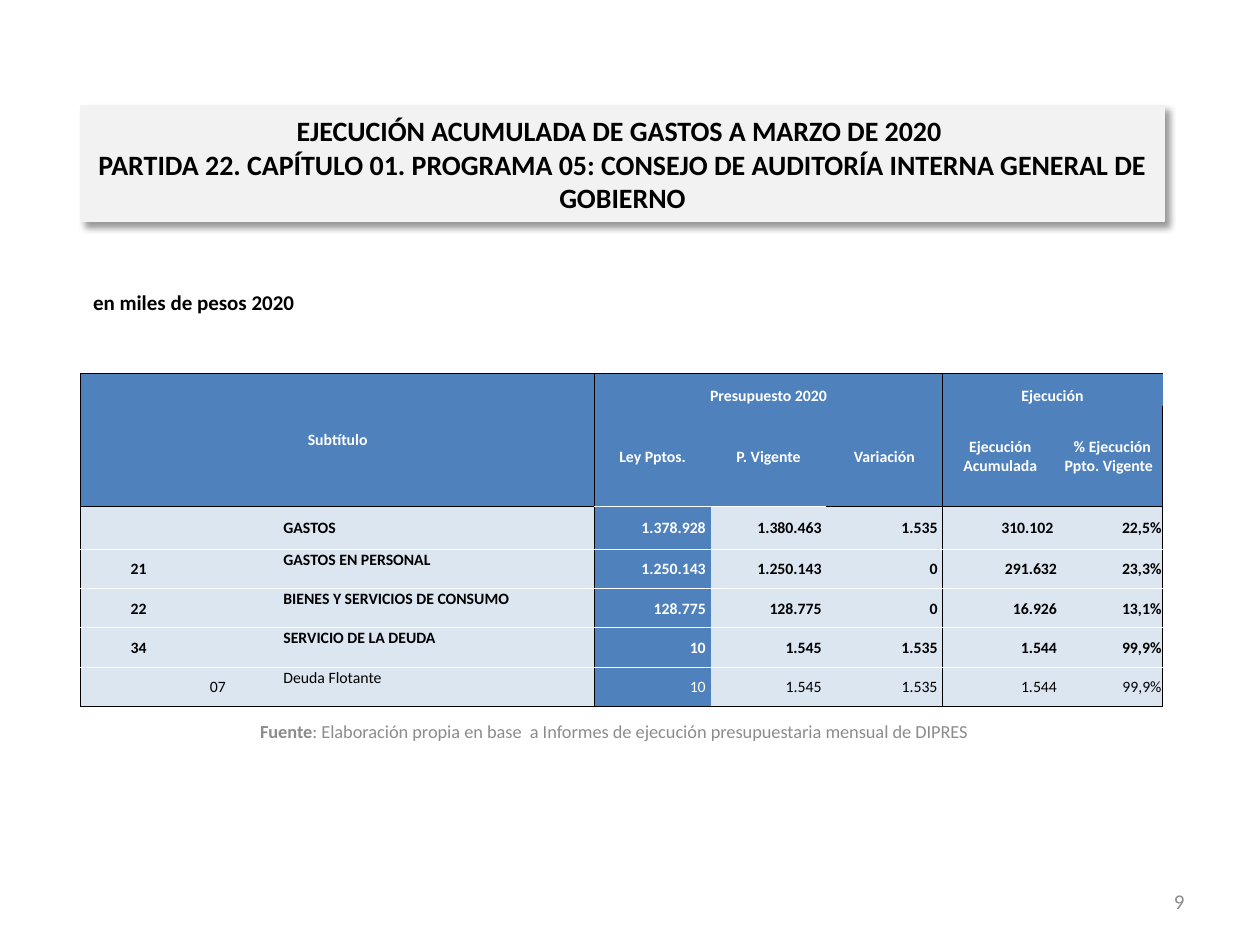
from dataclasses import dataclass
from typing import Optional

from lxml import etree
from pptx import Presentation
from pptx.dml.color import RGBColor
from pptx.enum.text import MSO_ANCHOR, MSO_AUTO_SIZE, PP_ALIGN
from pptx.oxml import parse_xml
from pptx.oxml.ns import nsdecls, qn
from pptx.util import Inches, Pt

LEFT, CENTER, RIGHT = PP_ALIGN.LEFT, PP_ALIGN.CENTER, PP_ALIGN.RIGHT
TOP, MIDDLE, BOTTOM = MSO_ANCHOR.TOP, MSO_ANCHOR.MIDDLE, MSO_ANCHOR.BOTTOM
NO_AUTOFIT = MSO_AUTO_SIZE.NONE

FONT = "Calibri"
COLORS = {"black": "000000", "white": "FFFFFF", "gray": "8C8C8C",
          "panel": "F2F2F2", "blue": "4F81BD", "pale": "DCE6F1"}
SLIDE_WIDTH, SLIDE_HEIGHT = Inches(10), Inches(7.5)
PLAIN_TABLE_STYLE = "{2D5ABB26-0587-4C30-8999-92F81FD0307C}"

# Percent of the slide's width and height
COLUMN_WIDTHS = [9.2, 3.4, 3.4, 24.8, 9.2, 9.2, 9.2, 9.2, 8.3]
ROW_HEIGHTS = [3.47, 10.67, 4.53] + [4.15] * 4

HEADER_ROWS = 2
NAME_COLUMN, LAW_COLUMN, CURRENT_COLUMN = 3, 4, 5
GROUP_EDGES = (0, 4, 7, len(COLUMN_WIDTHS))


@dataclass
class Box:
    """Place and size in percent of the slide."""
    left: float
    top: float
    width: float
    height: float

    def emu(self) -> tuple[int, int, int, int]:
        return (across(self.left), down(self.top),
                across(self.width), down(self.height))


@dataclass
class Style:
    size: float
    color: str = "black"
    bold: bool = False
    align: PP_ALIGN = LEFT
    anchor: MSO_ANCHOR = MIDDLE


@dataclass
class HeaderGroup:
    text: str
    first: int
    last: int
    rows: int
    anchor: MSO_ANCHOR


@dataclass
class BudgetLine:
    code: str
    code_column: int
    name: str
    amounts: list[str]
    bold: bool = True
    name_anchor: MSO_ANCHOR = TOP


GROUPS = [
    HeaderGroup("Subtítulo", 0, 3, 2, MIDDLE),
    HeaderGroup("Presupuesto 2020", 4, 6, 1, BOTTOM),
    HeaderGroup("Ejecución", 7, 8, 1, BOTTOM),
]
AMOUNT_HEADINGS = ["Ley Pptos.", "P. Vigente", "Variación",
                   "Ejecución Acumulada", " % Ejecución Ppto. Vigente "]
BUDGET_LINES = [
    BudgetLine("", 0, "GASTOS", ["1.378.928 ", "1.380.463 ", "1.535 ", "310.102 ", "22,5%"],
               name_anchor=MIDDLE),
    BudgetLine("21", 0, "GASTOS EN PERSONAL",
               ["1.250.143 ", "1.250.143 ", "0 ", "291.632", "23,3%"]),
    BudgetLine("22", 0, "BIENES Y SERVICIOS DE CONSUMO",
               ["128.775 ", "128.775 ", "0 ", "16.926", "13,1%"]),
    BudgetLine("34", 0, "SERVICIO DE LA DEUDA",
               ["10 ", "1.545 ", "1.535 ", "1.544", "99,9%"]),
    BudgetLine("07", 1, "Deuda Flotante",
               ["10 ", "1.545 ", "1.535 ", "1.544", "99,9%"], bold=False),
]


def across(percent: float) -> int:
    return round(SLIDE_WIDTH * percent / 100)


def down(percent: float) -> int:
    return round(SLIDE_HEIGHT * percent / 100)


def rgb(name: str) -> RGBColor:
    return RGBColor.from_string(COLORS[name])


def format_text(text_frame, style: Style) -> None:
    for paragraph in text_frame.paragraphs:
        paragraph.alignment = style.align
        for run in paragraph.runs:
            run.font.name = FONT
            run.font.size = Pt(style.size)
            run.font.bold = style.bold
            run.font.color.rgb = rgb(style.color)


def add_text(slide, box: Box, text: str, style: Style):
    shape = slide.shapes.add_textbox(*box.emu())
    text_frame = shape.text_frame
    text_frame.word_wrap = True
    text_frame.vertical_anchor = style.anchor
    text_frame.text = text
    format_text(text_frame, style)
    return shape


def add_title(slide, box: Box, text: str) -> None:
    title = slide.shapes.title
    title.left, title.top, title.width, title.height = box.emu()
    title.fill.solid()
    title.fill.fore_color.rgb = rgb("panel")
    title.line.color.rgb = rgb("panel")
    title.line.width = Pt(0.75)
    title.text_frame.text = text
    title.text_frame.auto_size = NO_AUTOFIT
    title.text_frame.vertical_anchor = MIDDLE
    format_text(title.text_frame, Style(16, bold=True, align=CENTER))
    title._element.spPr.append(parse_xml(
        f'<a:effectLst {nsdecls("a")}><a:outerShdw blurRad="{Pt(4)}" dist="{Pt(3)}" '
        f'dir="2700000" algn="tl" rotWithShape="0"><a:srgbClr val="{COLORS["black"]}">'
        '<a:alpha val="40000"/></a:srgbClr></a:outerShdw></a:effectLst>'))


def vertical_line(edge: int) -> Optional[str]:
    return "black" if edge in GROUP_EDGES else None


def horizontal_line(edge: int, column: int) -> Optional[str]:
    if edge in (0, len(ROW_HEIGHTS)):
        return "black"
    if edge < HEADER_ROWS:
        return None
    if edge == HEADER_ROWS and column not in (LAW_COLUMN, CURRENT_COLUMN):
        return "black"
    return "white"


def set_borders(cell, row: int, column: int) -> None:
    properties = cell._tc.get_or_add_tcPr()
    borders = {"lnL": vertical_line(column), "lnR": vertical_line(column + 1),
               "lnT": horizontal_line(row, column), "lnB": horizontal_line(row + 1, column)}
    for tag, color in borders.items():
        line = etree.SubElement(properties, qn(f"a:{tag}"), w=str(Pt(0.5)))
        if color is None:
            etree.SubElement(line, qn("a:noFill"))
        else:
            fill = etree.SubElement(line, qn("a:solidFill"))
            etree.SubElement(fill, qn("a:srgbClr"), val=COLORS[color])


def prepare_cell(cell, row: int, column: int) -> None:
    set_borders(cell, row, column)
    is_blue = row < HEADER_ROWS or column == LAW_COLUMN
    cell.fill.solid()
    cell.fill.fore_color.rgb = rgb("blue" if is_blue else "pale")
    cell.margin_left = cell.margin_right = cell.margin_top = Inches(0.01)
    cell.margin_bottom = 0


def write_cell(cell, text: str, style: Style) -> None:
    cell.text_frame.text = text
    cell.vertical_anchor = style.anchor
    format_text(cell.text_frame, style)


def add_budget_table(slide, box: Box) -> None:
    frame = slide.shapes.add_table(len(ROW_HEIGHTS), len(COLUMN_WIDTHS), *box.emu())
    table = frame.table
    table.first_row = table.horz_banding = False
    table._tbl.tblPr.find(qn("a:tableStyleId")).text = PLAIN_TABLE_STYLE
    for column, width in zip(table.columns, COLUMN_WIDTHS):
        column.width = across(width)
    for row, height in zip(table.rows, ROW_HEIGHTS):
        row.height = down(height)
    for row in range(len(ROW_HEIGHTS)):
        for column in range(len(COLUMN_WIDTHS)):
            prepare_cell(table.cell(row, column), row, column)

    for group in GROUPS:
        cell = table.cell(0, group.first)
        cell.merge(table.cell(group.rows - 1, group.last))
        write_cell(cell, group.text, Style(9, "white", True, CENTER, group.anchor))
    for column, heading in enumerate(AMOUNT_HEADINGS, LAW_COLUMN):
        write_cell(table.cell(1, column), heading, Style(9, "white", True, CENTER))
    for row, line in enumerate(BUDGET_LINES, HEADER_ROWS):
        write_cell(table.cell(row, line.code_column), line.code,
                   Style(9, bold=line.bold, align=CENTER))
        write_cell(table.cell(row, NAME_COLUMN), line.name,
                   Style(9, bold=line.bold, anchor=line.name_anchor))
        for column, amount in enumerate(line.amounts, LAW_COLUMN):
            color = "white" if column == LAW_COLUMN else "black"
            write_cell(table.cell(row, column), amount, Style(9, color, line.bold, RIGHT))


def main() -> None:
    presentation = Presentation()
    presentation.slide_width, presentation.slide_height = SLIDE_WIDTH, SLIDE_HEIGHT
    slide = presentation.slides.add_slide(presentation.slide_layouts[5])

    source = add_text(slide, Box(6.4, 74.13, 84.7, 6.4), "Fuente",
                      Style(10.5, "gray", align=CENTER))
    paragraph = source.text_frame.paragraphs[0]
    paragraph.add_run().text = (": Elaboración propia en base  a Informes de ejecución "
                                "presupuestaria mensual de DIPRES")
    format_text(source.text_frame, Style(10.5, "gray", align=CENTER))
    paragraph.runs[0].font.bold = True

    add_text(slide, Box(71.7, 92.67, 23.3, 5.33), "9", Style(12, "gray", align=RIGHT))
    add_title(slide, Box(6.4, 11.2, 86, 12.27),
              "EJECUCIÓN ACUMULADA DE GASTOS A MARZO DE 2020 \v"
              "PARTIDA 22. CAPÍTULO 01. PROGRAMA 05: CONSEJO DE AUDITORÍA INTERNA "
              "GENERAL DE GOBIERNO")
    add_text(slide, Box(6.4, 30, 86, 4.4), "en miles de pesos 2020",
             Style(12, bold=True, anchor=TOP))
    add_budget_table(slide, Box(6.4, 39.47, sum(COLUMN_WIDTHS), sum(ROW_HEIGHTS)))
    presentation.save("out.pptx")


if __name__ == "__main__":
    main()
